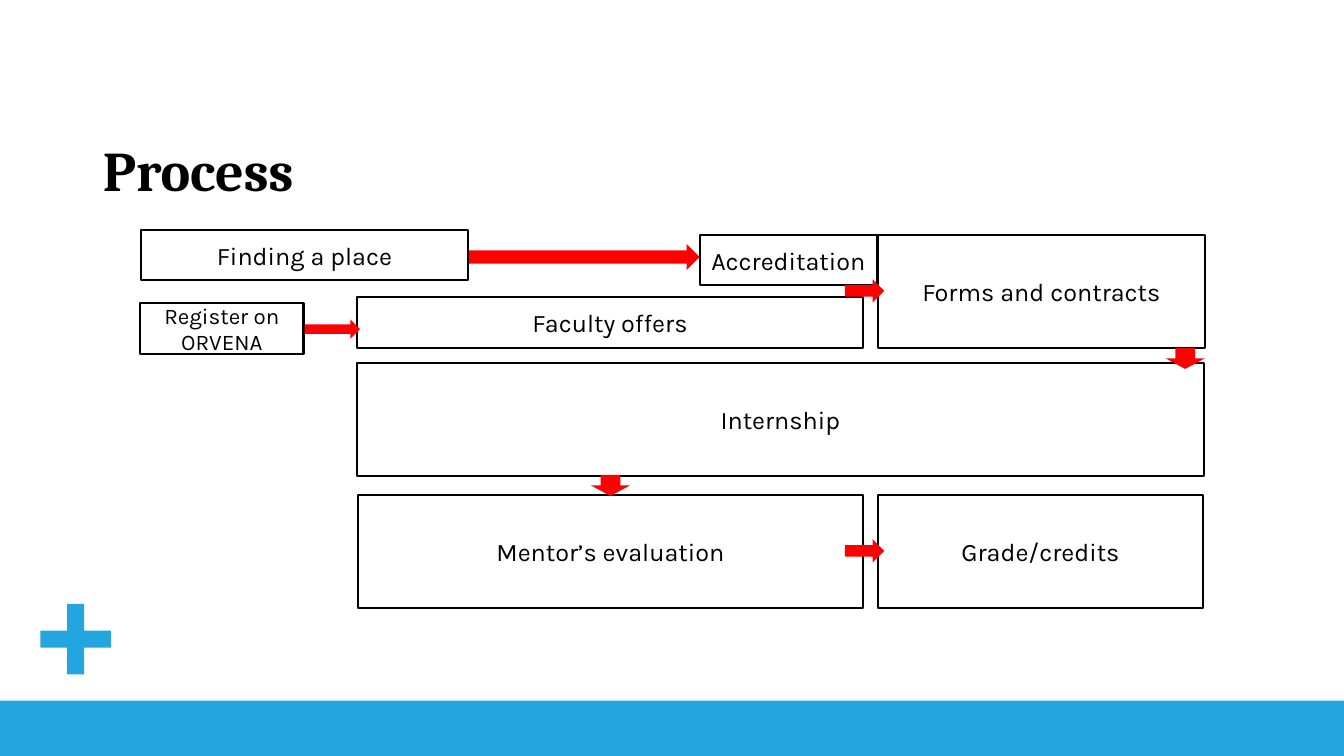
import pptx
import pptx.util
import pptx.dml.color
import pptx.enum.shapes
import pptx.enum.text

Inches = pptx.util.Inches
Pt = pptx.util.Pt
SHAPE = pptx.enum.shapes.MSO_SHAPE
ALIGN = pptx.enum.text.PP_ALIGN
MIDDLE = pptx.enum.text.MSO_ANCHOR.MIDDLE
COLORS = {"accent": "23A5DF", "arrow": "FF0000", "ink": "000000", "paper": "FFFFFF"}


def color(name):
    return pptx.dml.color.RGBColor.from_string(COLORS[name])


def add_filled(preset, bounds, fill):
    shape = slide.shapes.add_shape(preset, *[Inches(length) for length in bounds])
    shape.shadow.inherit = False
    shape.fill.solid()
    shape.fill.fore_color.rgb = color(fill)
    shape.line.fill.background()
    return shape


deck = pptx.Presentation()
deck.slide_width = Inches(13.33)
deck.slide_height = Inches(7.5)
slide = deck.slides.add_slide(deck.slide_layouts[5])
slide.background.fill.solid()
slide.background.fill.fore_color.rgb = color("paper")

add_filled(SHAPE.RECTANGLE, (0, 6.95, 13.33, 0.55), "accent")
plus = add_filled(SHAPE.CROSS, (0.4, 5.99, 0.7, 0.7), "accent")
plus.adjustments[0] = 0.38

title = slide.shapes.title
title.left, title.top = Inches(0.92), Inches(1.16)
title.width, title.height = Inches(11.5), Inches(1.13)
title.text_frame.text = "Process"
title.text_frame.vertical_anchor = MIDDLE
heading = title.text_frame.paragraphs[0]
heading.alignment = ALIGN.LEFT
heading.line_spacing = 0.9
heading.font.name = "Cambria"
heading.font.size = Pt(40)
heading.font.bold = True
heading.font.color.rgb = color("ink")

low, tall = 0.5, 1.12
steps = [
    ("Finding a place", (1.4, 2.28, 3.24, low), 18),
    ("Faculty offers", (3.54, 2.95, 5.02, low), 18),
    ("Accreditation", (6.94, 2.33, 1.76, low), 18),
    ("Forms and contracts", (8.71, 2.33, 3.24, tall), 18),
    ("Internship", (3.54, 3.6, 8.4, tall), 18),
    ("Mentor’s evaluation", (3.55, 4.91, 5.01, tall), 18),
    ("Grade/credits", (8.71, 4.91, 3.22, tall), 18),
    ("Register on ORVENA", (1.39, 3.01, 1.62, low), 16),
]
for label, bounds, size in steps:
    step = add_filled(SHAPE.RECTANGLE, bounds, "paper")
    step.line.color.rgb = color("ink")
    step.line.width = Pt(1.5)
    step.text_frame.word_wrap = True
    step.text_frame.vertical_anchor = MIDDLE
    step.text_frame.text = label
    caption = step.text_frame.paragraphs[0]
    caption.alignment = ALIGN.CENTER
    caption.font.name = "Karla"
    caption.font.size = Pt(size)
    caption.font.color.rgb = color("ink")

flows = [
    (SHAPE.RIGHT_ARROW, (3.02, 3.17, 0.55, 0.19)),
    (SHAPE.RIGHT_ARROW, (8.38, 5.35, 0.39, 0.23)),
    (SHAPE.RIGHT_ARROW, (4.65, 2.42, 2.29, 0.26)),
    (SHAPE.RIGHT_ARROW, (8.38, 2.77, 0.39, 0.23)),
    (SHAPE.DOWN_ARROW, (11.56, 3.45, 0.39, 0.21)),
    (SHAPE.DOWN_ARROW, (5.86, 4.71, 0.39, 0.21)),
]
for direction, bounds in flows:
    add_filled(direction, bounds, "arrow")

deck.save("out.pptx")
